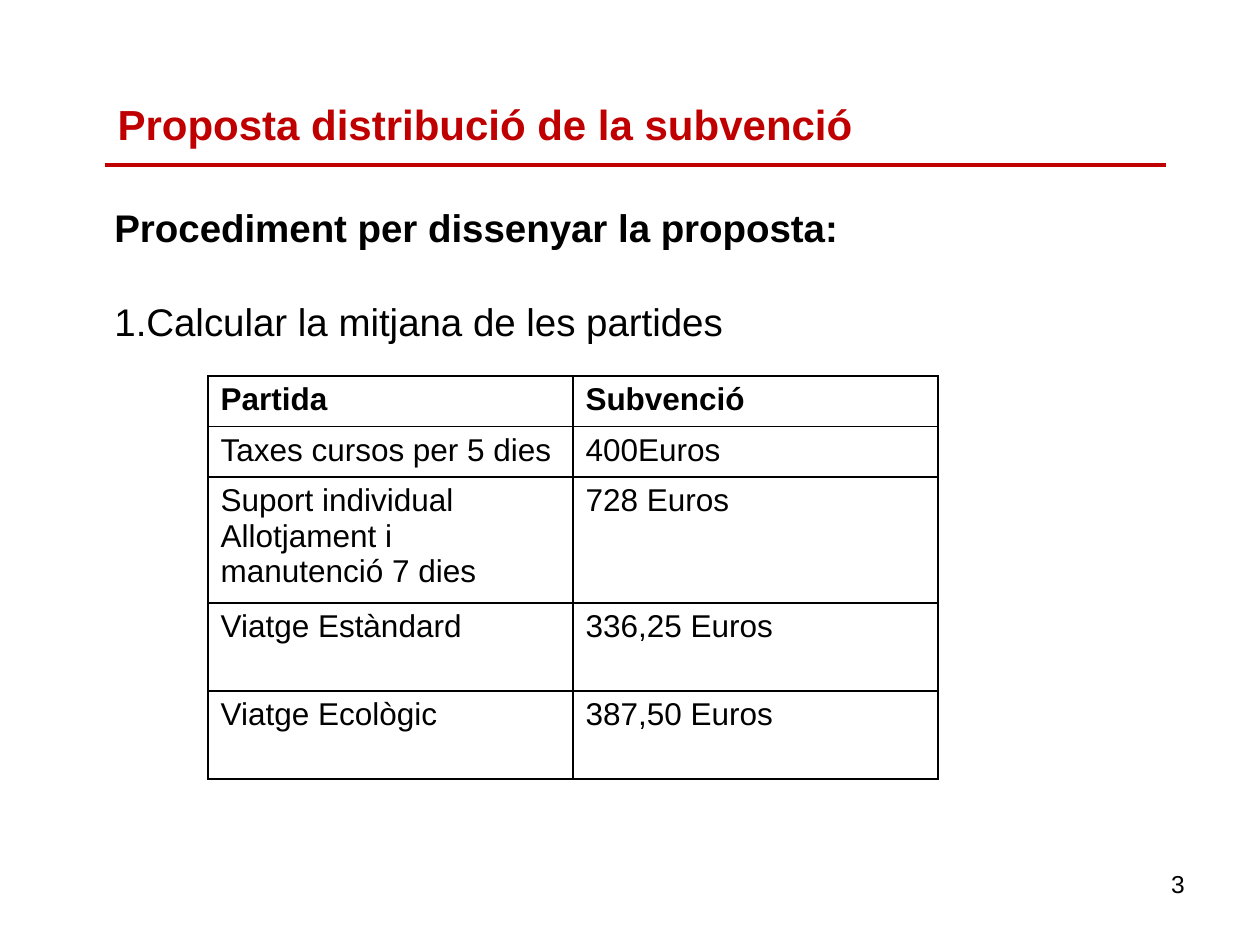
"""Builds the slide on the proposed split of the grant."""
import pptx
import pptx.util
import pptx.dml.color
import pptx.enum.text
import pptx.enum.shapes
import pptx.oxml
import pptx.oxml.ns

RED, BLACK, WHITE = "C00000", "000000", "FFFFFF"
NS = pptx.oxml.ns.nsdecls("a")
ALIGN = pptx.enum.text.PP_ALIGN


def px(num):
    return pptx.util.Emu(round(num * 914400 / 126))


def write(par, text, size, tint=BLACK, bold=False):
    run = par.add_run()
    run.text = text
    run.font.name = "Arial"
    run.font.size = pptx.util.Pt(size)
    run.font.bold = bold
    run.font.color.rgb = pptx.dml.color.RGBColor.from_string(tint)


deck = pptx.Presentation()
deck.slide_width, deck.slide_height = px(1260), px(945)
slide = deck.slides.add_slide(deck.slide_layouts[5])
shapes = slide.shapes

rule = shapes.add_connector(
    pptx.enum.shapes.MSO_CONNECTOR.STRAIGHT, px(105), px(165), px(1166), px(165))
rule.line.color.rgb = pptx.dml.color.RGBColor.from_string(RED)
rule.line.width = pptx.util.Pt(2.25)
rule._element.spPr.append(pptx.oxml.parse_xml(f"<a:effectLst {NS}/>"))

title = shapes.title
title.left, title.top, title.width, title.height = px(105), px(92), px(1071), px(139)
frame = title.text_frame
frame.auto_size = pptx.enum.text.MSO_AUTO_SIZE.NONE
frame.vertical_anchor = pptx.enum.text.MSO_ANCHOR.TOP
frame.paragraphs[0].alignment = ALIGN.LEFT
write(frame.paragraphs[0], "Proposta distribució de la subvenció", 24, RED, True)

body = shapes.add_textbox(px(102), px(198), px(1012), px(339)).text_frame
body.word_wrap = True
write(body.paragraphs[0], "Procediment per dissenyar la proposta:", 22, bold=True)
step = body.add_paragraph()
step.space_before = pptx.util.Pt(27)
props = step._p.get_or_add_pPr()
props.set("marL", "0")
props.set("indent", "0")
props.append(pptx.oxml.parse_xml(f'<a:buFont {NS} typeface="Arial"/>'))
props.append(pptx.oxml.parse_xml(f'<a:buAutoNum {NS} type="arabicPeriod"/>'))
write(step, "Calcular la mitjana de les partides", 22)

rows = [
    (50, "Partida", "Subvenció"),
    (50, "Taxes cursos per 5 dies", "400Euros"),
    (126, "Suport individual\nAllotjament i manutenció 7 dies", "728 Euros"),
    (88, "Viatge Estàndard", "336,25 Euros"),
    (88, "Viatge Ecològic", "387,50 Euros"),
]
high = sum(row[0] for row in rows)
table = shapes.add_table(len(rows), 2, px(208), px(376), px(730), px(high)).table
for r, (tall, *texts) in enumerate(rows):
    table.rows[r].height = px(tall)
    for c, text in enumerate(texts):
        cell = table.cell(r, c)
        for n, line in enumerate(text.split("\n")):
            frame = cell.text_frame
            par = frame.add_paragraph() if n else frame.paragraphs[0]
            write(par, line, 18, bold=r == 0)
        edges = cell._tc.get_or_add_tcPr()
        for side in ("lnL", "lnR", "lnT", "lnB"):
            edges.append(pptx.oxml.parse_xml(
                f'<a:{side} {NS} w="12700"><a:solidFill>'
                f'<a:srgbClr val="{BLACK}"/></a:solidFill></a:{side}>'))
        cell.fill.solid()
        cell.fill.fore_color.rgb = pptx.dml.color.RGBColor.from_string(WHITE)

page = shapes.add_textbox(px(903), px(863), px(294), px(66)).text_frame
page.word_wrap = True
page.paragraphs[0].alignment = ALIGN.RIGHT
write(page.paragraphs[0], "3", 14)

deck.save("out.pptx")
